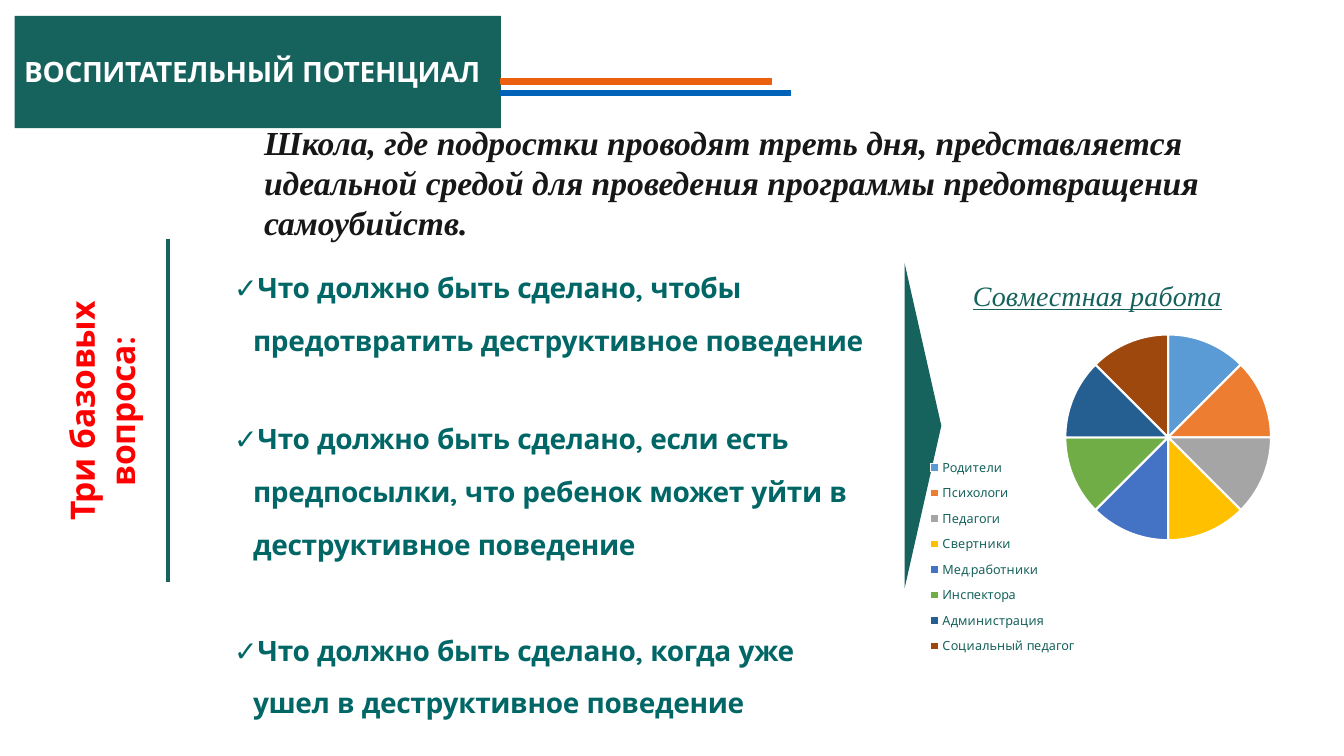
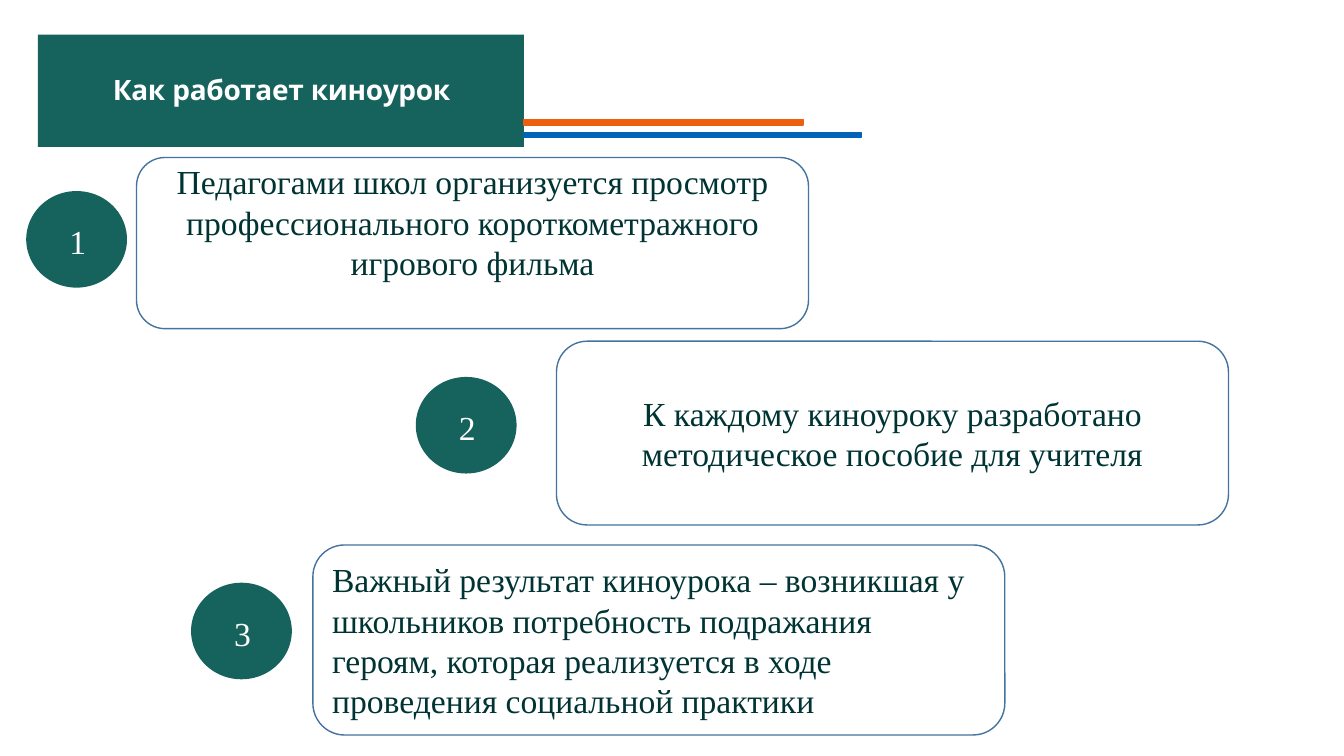
from lxml import etree
from pptx import Presentation
from pptx.chart.data import CategoryChartData
from pptx.dml.color import RGBColor
from pptx.enum.chart import XL_CHART_TYPE as CT, XL_LEGEND_POSITION as LP
from pptx.enum.shapes import MSO_CONNECTOR as MC, MSO_SHAPE as MS
from pptx.enum.text import MSO_ANCHOR as MA, MSO_AUTO_SIZE as AS, PP_ALIGN as PA
from pptx.oxml.ns import qn
from pptx.util import Pt

PX = 9525
SANS, SERIF = "Quicksand", "Times New Roman"
C = {
    "green": "16625C", "teal": "006666", "dark": "003333", "ink": "181717",
    "red": "FF0000", "orange": "EC5F0F", "blue": "0063B8", "outline": "43739E",
    "white": "FFFFFF",
}
SLICES = {
    "Родители": "5B9BD5", "Психологи": "ED7D31", "Педагоги": "A5A5A5",
    "Свертники": "FFC000", "Мед.работники": "4472C4", "Инспектора": "70AD47",
    "Администрация": "255E91", "Социальный педагог": "9E480E",
}
QUESTIONS = [
    ["Что должно быть сделано, чтобы предотвратить деструктивное поведение"],
    ["Что должно быть сделано, если есть предпосылки, что ребенок может уйти в "
     "деструктивное поведение",
     "Что должно быть сделано, когда уже ушел в деструктивное поведение"],
    [], [], [], [],
]
QUOTE = ("Школа, где подростки проводят треть дня, представляется идеальной средой "
         "для проведения программы предотвращения самоубийств.")
STEPS = [
    ((130, 150, 640, 163), (25, 182), PA.CENTER, 41,
     "Педагогами школ организуется просмотр профессионального "
     "короткометражного игрового фильма"),
    ((530, 325, 640, 175), (396, 359), PA.CENTER, 0,
     "К каждому киноуроку разработано методическое пособие для учителя"),
    ((298, 519, 659, 181), (182, 555), PA.LEFT, 0,
     "Важный результат киноурока – возникшая у школьников потребность подражания "
     "героям, которая реализуется в ходе проведения социальной практики"),
]


def px(*values):
    """Turn pixel lengths into EMU."""
    return [v * PX for v in values]


def rgb(name):
    """Give the colour for a palette name or a hex string."""
    return RGBColor.from_string(C.get(name, name))


def style(font, size, color, name=SANS, bold=False, italic=False):
    """Format a font."""
    font.size, font.name, font.bold, font.italic = Pt(size), name, bold, italic
    font.color.rgb = rgb(color)


def write(p, text, size, color, name=SANS, bold=False, italic=False, align=PA.LEFT):
    """Fill a paragraph with one formatted run."""
    p.text, p.alignment = text, align
    for r in p.runs:
        style(r.font, size, color, name, bold, italic)
        if name == SANS:
            r.font._element.set("spc", "-25")


def insets(tf, left, top, right, bottom):
    """Set the margins of a text frame or cell."""
    tf.margin_left, tf.margin_top = px(left, top)
    tf.margin_right, tf.margin_bottom = px(right, bottom)


def shape(s, kind, box, fill, line=None):
    """Add a filled preset shape."""
    sp = s.shapes.add_shape(kind, *px(*box))
    sp.shadow.inherit = False
    sp.fill.solid()
    sp.fill.fore_color.rgb = rgb(fill)
    if line:
        sp.line.color.rgb, sp.line.width = rgb(line), Pt(1)
    else:
        sp.line.fill.background()
    return sp


def textbox(s, box, text, *args, **kwargs):
    """Add a wrapping text box with one paragraph."""
    tb = s.shapes.add_textbox(*px(*box))
    tb.text_frame.word_wrap = True
    write(tb.text_frame.paragraphs[0], text, *args, **kwargs)
    return tb


def header(prs, x, y, title, align, stripes):
    """Add a slide with a title band and the stripes to its right."""
    s = prs.slides.add_slide(prs.slide_layouts[5])
    w, h = 463, 107
    sp = s.shapes.title
    sp.left, sp.top, sp.width, sp.height = px(x, y, w, h)
    sp.fill.solid()
    sp.fill.fore_color.rgb = rgb("green")
    tf = sp.text_frame
    tf.auto_size, tf.word_wrap, tf.vertical_anchor = AS.NONE, True, MA.MIDDLE
    insets(tf, 9, 3, 8, 5)
    write(tf.paragraphs[0], title, 20, "white", bold=True, align=align)
    for color, dy, length in stripes:
        shape(s, MS.RECTANGLE, (x + w, y + dy, length, 5), color, color)
    return s


def question(p, text, gap):
    """Write one question with a check mark."""
    pPr = p._p.get_or_add_pPr()
    pPr.set("marL", str(18 * PX))
    pPr.set("indent", str(-18 * PX))
    etree.SubElement(pPr, qn("a:buFont")).set("typeface", SANS)
    etree.SubElement(pPr, qn("a:buChar")).set("char", "✓")
    p.line_spacing = 1.5
    if gap:
        p.space_before = Pt(gap)
    write(p, text, 20, "teal", bold=True)


def questions(s, x, y, w):
    """Add the table of questions, which ends in thin empty rows."""
    heights = [144, 315, 5, 5, 5, 5]
    tbl = s.shapes.add_table(len(heights), 1, *px(x, y, w, sum(heights))).table
    tbl.first_row = tbl.horz_banding = False
    for row, height, texts in zip(tbl.rows, heights, QUESTIONS):
        row.height = height * PX
        cell = row.cells[0]
        cell.fill.solid()
        cell.fill.fore_color.rgb = rgb("white")
        insets(cell, 7, 0, 14, 0)
        tf = cell.text_frame
        for i, text in enumerate(texts):
            p = tf.add_paragraph() if i else tf.paragraphs[0]
            question(p, text, 38 * i)
        if not texts:
            end = etree.SubElement(tf.paragraphs[0]._p, qn("a:endParaRPr"))
            end.set("sz", "100")


def place(el, index, **sizes):
    """Give a chart part a manual layout in fractions of the chart."""
    for old in el.findall(qn("c:layout")):
        el.remove(old)
    layout = etree.Element(qn("c:layout"))
    manual = etree.SubElement(layout, qn("c:manualLayout"))
    if el.tag == qn("c:plotArea"):
        etree.SubElement(manual, qn("c:layoutTarget")).set("val", "inner")
    for key in "xy":
        etree.SubElement(manual, qn(f"c:{key}Mode")).set("val", "edge")
    for key, value in sizes.items():
        etree.SubElement(manual, qn(f"c:{key}")).set("val", str(value))
    el.insert(index, layout)


def team_chart(s, box):
    """Add the pie of people who work together."""
    data = CategoryChartData()
    data.categories = list(SLICES)
    data.add_series("Series 1", [12] * len(SLICES))
    chart = s.shapes.add_chart(CT.PIE, *px(*box), data).chart
    style(chart.font, 10, "teal")
    chart.has_title = True
    p = chart.chart_title.text_frame.paragraphs[0]
    write(p, "Совместная работа", 20, "green", SERIF, italic=True, align=PA.CENTER)
    p.runs[0].font.underline = True
    chart.chart_title.include_in_layout = False
    chart.has_legend = True
    chart.legend.position = LP.BOTTOM
    chart.legend.include_in_layout = False
    style(chart.legend.font, 9, "green")
    plot = chart.plots[0]
    plot.vary_by_categories = True
    for i, color in enumerate(SLICES.values()):
        fmt = plot.series[0].points[i].format
        fmt.fill.solid()
        fmt.fill.fore_color.rgb = rgb(color)
        fmt.line.color.rgb, fmt.line.width = rgb("white"), Pt(1.5)
    place(chart.chart_title._element, 1, x=0.16, y=0.03)
    place(chart.legend._element, 1, x=0.04, y=0.46, w=0.42, h=0.52)
    place(plot._element.getparent(), 0, x=0.41, y=0.18, w=0.54, h=0.5)


def potential_slide(prs):
    """Build the slide with three questions and the pie."""
    s = header(prs, 14, 15, "ВОСПИТАТЕЛЬНЫЙ ПОТЕНЦИАЛ", PA.LEFT,
               [("orange", 60, 258), ("blue", 71, 276)])
    side = textbox(s, (-70, 348, 334, 87), "Три базовых вопроса:", 24, "red",
                   bold=True, align=PA.CENTER)
    side.rotation = 270
    arrow = shape(s, MS.ISOSCELES_TRIANGLE, (724, 388, 310, 35), "green")
    arrow.rotation = 90
    questions(s, 216, 241, 627)
    textbox(s, (242, 111, 940, 126), QUOTE, 24, "ink", SERIF, bold=True, italic=True)
    rule = s.shapes.add_connector(MC.STRAIGHT, *px(160, 228, 160, 554))
    rule.line.color.rgb, rule.line.width = rgb("green"), Pt(3)
    etree.SubElement(rule._element.spPr, qn("a:effectLst"))
    team_chart(s, (863, 248, 367, 392))


def step(s, number, box, spot, align, lift, text):
    """Add one step: a rounded box and its numbered circle."""
    tf = shape(s, MS.ROUNDED_RECTANGLE, box, "white", "outline").text_frame
    tf.word_wrap, tf.vertical_anchor = True, MA.MIDDLE
    if lift:
        insets(tf, 10, 0, 10, lift)
    write(tf.paragraphs[0], text, 24, "dark", SERIF, align=align)
    tf = shape(s, MS.OVAL, (*spot, 96, 92), "green").text_frame
    insets(tf, 2, 4, 0, 0)
    tf.vertical_anchor = MA.MIDDLE
    write(tf.paragraphs[0], str(number), 24, "white", SERIF, align=PA.CENTER)


def lesson_slide(prs):
    """Build the slide with three numbered steps."""
    s = header(prs, 36, 33, "Как работает киноурок", PA.CENTER,
               [("orange", 81, 266), ("blue", 93, 321)])
    for number, parts in enumerate(STEPS, 1):
        step(s, number, *parts)


def main():
    """Build and save the presentation."""
    prs = Presentation()
    prs.slide_width, prs.slide_height = px(1280, 720)
    potential_slide(prs)
    lesson_slide(prs)
    prs.save("out.pptx")


if __name__ == "__main__":
    main()
